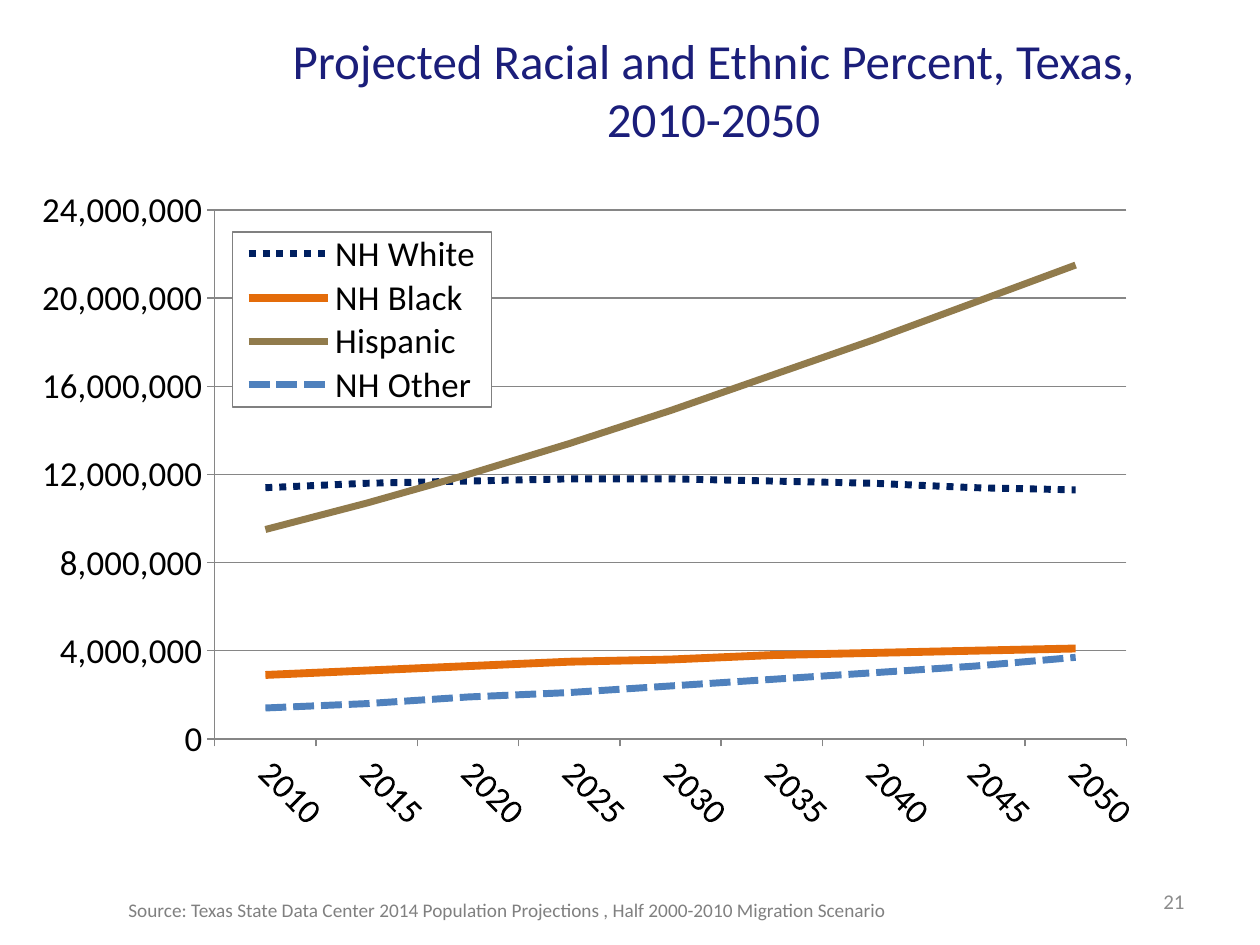
from lxml import etree
from pptx import Presentation
from pptx.chart.data import CategoryChartData
from pptx.dml.color import RGBColor
from pptx.enum.chart import XL_CHART_TYPE, XL_LEGEND_POSITION, XL_MARKER_STYLE, XL_TICK_MARK
from pptx.enum.dml import MSO_LINE
from pptx.enum.text import MSO_ANCHOR, PP_ALIGN
from pptx.oxml import parse_xml
from pptx.oxml.ns import nsdecls, qn
from pptx.util import Pt

LEFT, CENTER, RIGHT = PP_ALIGN.LEFT, PP_ALIGN.CENTER, PP_ALIGN.RIGHT
TOP, MIDDLE = MSO_ANCHOR.TOP, MSO_ANCHOR.MIDDLE
DOTTED, DASHED, SOLID = MSO_LINE.ROUND_DOT, MSO_LINE.SQUARE_DOT, MSO_LINE.SOLID
OUTSIDE = XL_TICK_MARK.OUTSIDE

FONT = "Calibri"
NAVY = RGBColor(0x1B, 0x1E, 0x7A)
BLACK = RGBColor(0, 0, 0)
NUMBER_GRAY = RGBColor(0x8C, 0x8C, 0x8C)
SOURCE_GRAY = RGBColor(0x80, 0x80, 0x80)
AXIS_GRAY = RGBColor(0x86, 0x86, 0x86)
DARK_BLUE = RGBColor(0x00, 0x20, 0x60)
ORANGE = RGBColor(0xE4, 0x6C, 0x0A)
TAN = RGBColor(0x91, 0x7B, 0x4C)
BLUE = RGBColor(0x4F, 0x81, 0xBD)

# Content: text, box in px, size, colour, alignment, anchor, hanging indent in px
TEXTS = [
    ("Projected Racial and Ethnic Percent, Texas, 2010-2050",
     (220, 21, 987, 136), 28, NAVY, CENTER, MIDDLE, 0),
    ("21", (903, 876, 294, 50), 12, NUMBER_GRAY, RIGHT, MIDDLE, 0),
    ("Source: Texas State Data Center 2014 Population Projections , "
     "Half 2000-2010 Migration Scenario",
     (116, 892, 1207, 37), 11, SOURCE_GRAY, LEFT, TOP, 110),
]
YEARS = [str(year) for year in range(2010, 2051, 5)]
# Name, values in millions, colour, line width, dash
SERIES = [
    ("NH White", (11.4, 11.6, 11.7, 11.8, 11.8, 11.7, 11.6, 11.4, 11.3), DARK_BLUE, 4, DOTTED),
    ("NH Black", (2.9, 3.1, 3.3, 3.5, 3.6, 3.8, 3.9, 4.0, 4.1), ORANGE, 4.5, SOLID),
    ("Hispanic", (9.5, 10.7, 12.0, 13.4, 14.9, 16.5, 18.1, 19.8, 21.5), TAN, 4, SOLID),
    ("NH Other", (1.4, 1.6, 1.9, 2.1, 2.4, 2.7, 3.0, 3.3, 3.7), BLUE, 4, DASHED),
]
CHART_BOX = (42, 174, 1155, 670)
PLOT_BOX = (209, 210, 917, 529)
LEGEND_BOX = (227, 232, 260, 175)


def px(n):
    return round(n * 914400 / 126)


def add_text(s, text, box, size, color, align, anchor, hang):
    tf = s.shapes.add_textbox(*map(px, box)).text_frame
    tf.word_wrap = True
    tf.vertical_anchor = anchor
    p = tf.paragraphs[0]
    p.alignment = align
    if hang:
        pPr = p._p.get_or_add_pPr()
        pPr.set("marL", str(px(hang)))
        pPr.set("indent", str(-px(hang)))
    r = p.add_run()
    r.text = text
    r.font.name, r.font.size, r.font.color.rgb = FONT, Pt(size), color


def set_layout(parent, index, box, inner=False):
    """Place a chart part at a px box, as fractions of the chart."""
    for old in parent.findall(qn("c:layout")):
        parent.remove(old)
    layout = etree.Element(qn("c:layout"))
    manual = etree.SubElement(layout, qn("c:manualLayout"))
    cx, cy, cw, ch = CHART_BOX
    x, y, w, h = box
    values = {"layoutTarget": "inner"} if inner else {}
    values.update(xMode="edge", yMode="edge", x=(x - cx) / cw, y=(y - cy) / ch,
                  w=w / cw, h=h / ch)
    for tag, value in values.items():
        etree.SubElement(manual, qn("c:" + tag)).set("val", str(value))
    parent.insert(index, layout)


prs = Presentation()
prs.slide_width, prs.slide_height = px(1260), px(945)
s = prs.slides.add_slide(prs.slide_layouts[6])

# Line chart
data = CategoryChartData(number_format="#,##0")
data.categories = YEARS
for name, millions, *_ in SERIES:
    data.add_series(name, [round(m * 1_000_000) for m in millions])
chart = s.shapes.add_chart(XL_CHART_TYPE.LINE, *map(px, CHART_BOX), data).chart
chart.has_title = False
chart.font.name, chart.font.size, chart.font.color.rgb = FONT, Pt(20), BLACK
plot = chart.plots[0]
plot.vary_by_categories = False
for series, (_, _, color, width, dash) in zip(plot.series, SERIES):
    series.smooth = False
    series.marker.style = XL_MARKER_STYLE.NONE
    line = series.format.line
    line.color.rgb, line.width, line.dash_style = color, Pt(width), dash

# Axes
years, people = chart.category_axis, chart.value_axis
for axis in (years, people):
    axis.major_tick_mark = OUTSIDE
    axis.minor_tick_mark = XL_TICK_MARK.NONE
    axis.format.line.color.rgb = AXIS_GRAY
years.tick_labels.font.size = Pt(20)
years._element.find(qn("c:txPr")).find(qn("a:bodyPr")).set("rot", "2700000")
people.minimum_scale, people.maximum_scale, people.major_unit = 0, 24_000_000, 4_000_000
people.tick_labels.number_format = "#,##0"
people.tick_labels.number_format_is_linked = False
people.has_major_gridlines = True
people.major_gridlines.format.line.color.rgb = AXIS_GRAY
plot_area = plot._element.getparent()
for cross in plot_area.iter(qn("c:crossBetween")):
    cross.set("val", "midCat")
set_layout(plot_area, 0, PLOT_BOX, inner=True)

# Legend over the plot, white with a thin border
chart.has_legend = True
legend = chart.legend
legend.position = XL_LEGEND_POSITION.LEFT
legend.include_in_layout = True
set_layout(legend._element, 1, LEGEND_BOX)
legend._element.find(qn("c:overlay")).addnext(parse_xml(
    f'<c:spPr {nsdecls("c", "a")}><a:solidFill><a:srgbClr val="FFFFFF"/></a:solidFill>'
    '<a:ln w="9525"><a:solidFill><a:srgbClr val="808080"/></a:solidFill></a:ln></c:spPr>'))

# Title, slide number and source
for item in TEXTS:
    add_text(s, *item)

prs.save("out.pptx")
